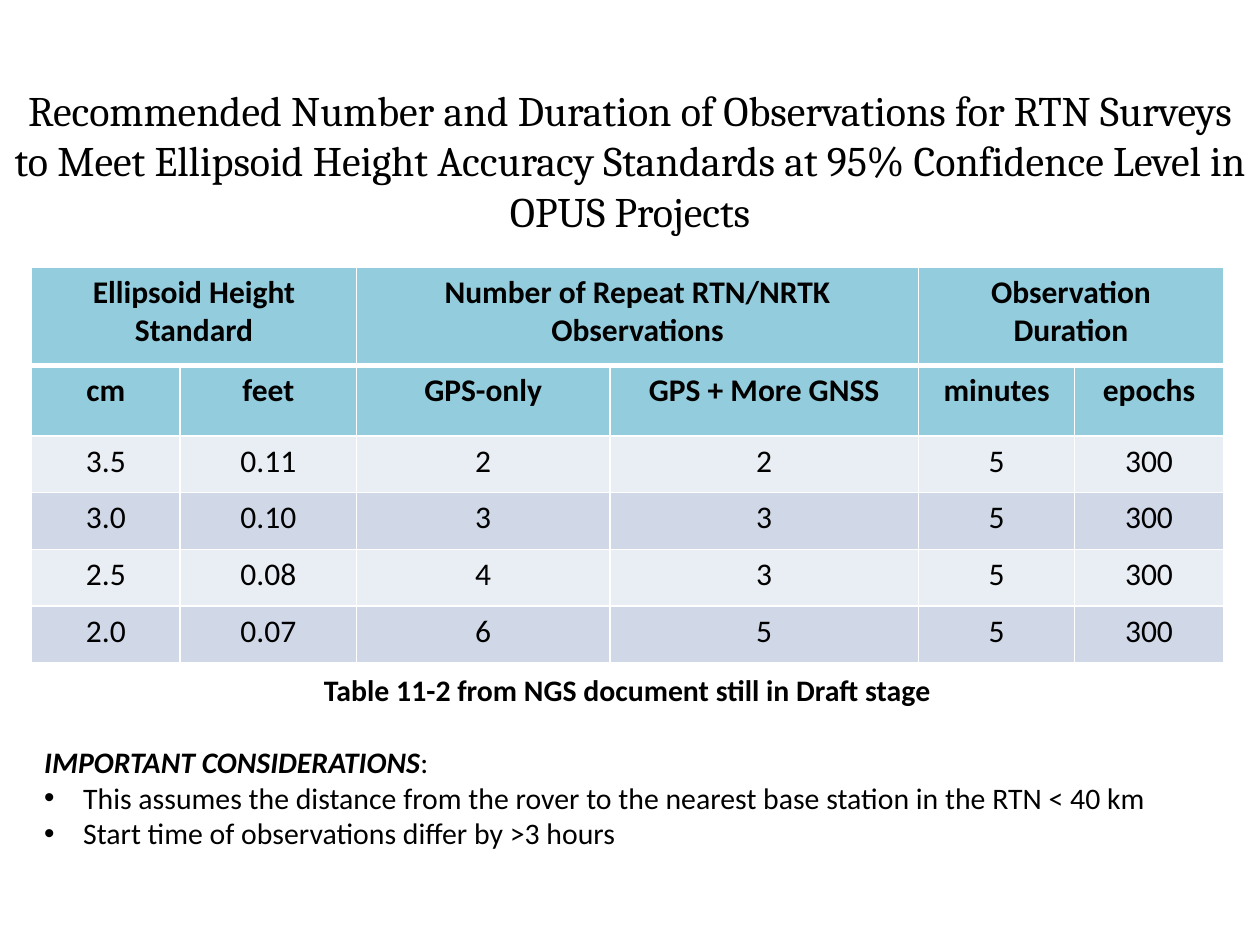
import lxml.etree
import pptx
import pptx.dml.color
import pptx.enum.text
import pptx.oxml.ns
import pptx.util
from dataclasses import dataclass
from pptx.util import Inches

ALIGN = pptx.enum.text.PP_ALIGN
ANCHOR = pptx.enum.text.MSO_ANCHOR


@dataclass(frozen=True)
class Theme:
    title_font: str = "Cambria"
    body_font: str = "Calibri"
    title_size: float = 24
    table_size: float = 18
    note_size: float = 17
    text: str = "000000"
    border: str = "FFFFFF"
    header: str = "93CDDD"
    bands: tuple = ("E9EDF4", "D0D8E8")


TITLE = ("Recommended Number and Duration of Observations for RTN Surveys to Meet "
         "Ellipsoid Height Accuracy Standards at 95% Confidence Level in OPUS Projects")
GROUPS = ["Ellipsoid Height Standard", "Number of Repeat RTN/NRTK Observations",
          "Observation Duration"]
ROWS = [
    ["cm", "feet", "GPS-only", "GPS + More GNSS", "minutes", "epochs"],
    ["3.5", "0.11", "2", "2", "5", "300"],
    ["3.0", "0.10", "3", "3", "5", "300"],
    ["2.5", "0.08", "4", "3", "5", "300"],
    ["2.0", "0.07", "6", "5", "5", "300"],
]
COLUMN_WIDTHS = [1.18, 1.4, 2.01, 2.45, 1.24, 1.18]
ROW_HEIGHTS = [0.78, 0.56] + [0.45] * 4
CAPTION = "Table 11-2 from NGS document still in Draft stage"
CONSIDERATIONS = [
    "This assumes the distance from the rover to the nearest base station in the RTN < 40 km",
    "Start time of observations differ by >3 hours",
]


class SlideBuilder:
    def __init__(self, slide, theme):
        self.slide = slide
        self.theme = theme

    def style_run(self, run, size, bold=False, italic=False, font=None):
        run.font.name = font or self.theme.body_font
        run.font.size = pptx.util.Pt(size)
        run.font.bold = bold
        run.font.italic = italic
        run.font.color.rgb = pptx.dml.color.RGBColor.from_string(self.theme.text)

    def place(self, shape, left, top, width, height):
        shape.left, shape.top = Inches(left), Inches(top)
        shape.width, shape.height = Inches(width), Inches(height)
        shape.text_frame.word_wrap = True
        shape.text_frame.auto_size = pptx.enum.text.MSO_AUTO_SIZE.NONE

    def title(self, text, *box):
        shape = self.slide.shapes.title
        self.place(shape, *box)
        shape.text_frame.vertical_anchor = ANCHOR.MIDDLE
        shape.text_frame.text = text
        paragraph = shape.text_frame.paragraphs[0]
        paragraph.alignment = ALIGN.CENTER
        self.style_run(paragraph.runs[0], self.theme.title_size, font=self.theme.title_font)

    def border(self, cell, side, width):
        line = lxml.etree.SubElement(cell._tc.get_or_add_tcPr(),
                                     pptx.oxml.ns.qn(f"a:ln{side}"),
                                     w=str(pptx.util.Pt(width)))
        fill = lxml.etree.SubElement(line, pptx.oxml.ns.qn("a:solidFill"))
        lxml.etree.SubElement(fill, pptx.oxml.ns.qn("a:srgbClr"), val=self.theme.border)

    def cell(self, cell, text, fill, bold, top=1, bottom=1):
        for side, width in zip("LRTB", (1, 1, top, bottom)):
            self.border(cell, side, width)
        cell.fill.solid()
        cell.fill.fore_color.rgb = pptx.dml.color.RGBColor.from_string(fill)
        if text:
            cell.text_frame.text = text
            paragraph = cell.text_frame.paragraphs[0]
            paragraph.alignment = ALIGN.CENTER
            self.style_run(paragraph.runs[0], self.theme.table_size, bold)

    def table(self, groups, rows, left, top):
        """Draw a table whose first row spans each group over two columns."""
        table = self.slide.shapes.add_table(
            len(ROW_HEIGHTS), len(COLUMN_WIDTHS), Inches(left), Inches(top),
            Inches(sum(COLUMN_WIDTHS)), Inches(sum(ROW_HEIGHTS))).table
        for column, width in zip(table.columns, COLUMN_WIDTHS):
            column.width = Inches(width)
        for row, height in zip(table.rows, ROW_HEIGHTS):
            row.height = Inches(height)
        for index, text in enumerate(groups):
            first, second = table.cell(0, 2 * index), table.cell(0, 2 * index + 1)
            first.merge(second)
            self.cell(first, text, self.theme.header, True, bottom=3)
            self.cell(second, "", self.theme.header, True, bottom=3)
        for row_index, values in enumerate(rows):
            is_header = row_index == 0
            fill = self.theme.header if is_header else self.theme.bands[(row_index - 1) % 2]
            for column_index, text in enumerate(values):
                self.cell(table.cell(row_index + 1, column_index), text, fill, is_header,
                          top=3 if is_header else 1)

    def indent(self, paragraph, hanging, bullet=None):
        properties = paragraph._p.get_or_add_pPr()
        properties.set("marL", str(Inches(hanging)))
        properties.set("indent", str(-Inches(hanging)))
        if bullet:
            lxml.etree.SubElement(properties, pptx.oxml.ns.qn("a:buChar"), char=bullet)
        else:
            lxml.etree.SubElement(properties, pptx.oxml.ns.qn("a:buNone"))
        paragraph.space_before = pptx.util.Pt(0)

    def notes(self, caption, heading, items, *box):
        shape = self.slide.placeholders[1]
        self.place(shape, *box)
        frame = shape.text_frame
        frame.vertical_anchor = ANCHOR.TOP
        frame.text = "\n".join([caption, heading, *items])
        caption_line, heading_line, *item_lines = frame.paragraphs
        size = self.theme.note_size

        self.indent(caption_line, 0)
        caption_line.alignment = ALIGN.CENTER
        self.style_run(caption_line.runs[0], size, bold=True)

        self.indent(heading_line, 0)
        heading_line.space_before = pptx.util.Pt(20.75)
        self.style_run(heading_line.runs[0], size, bold=True, italic=True)
        colon = heading_line.add_run()
        colon.text = ":"
        self.style_run(colon, size)

        for paragraph in item_lines:
            self.indent(paragraph, 0.31, "•")
            self.style_run(paragraph.runs[0], size)


def main():
    presentation = pptx.Presentation()
    presentation.slide_width, presentation.slide_height = Inches(10), Inches(7.5)
    slide = presentation.slides.add_slide(presentation.slide_layouts[1])
    builder = SlideBuilder(slide, Theme())
    builder.title(TITLE, 0, 0.54, 10, 1.46)
    builder.table(GROUPS, ROWS, 0.25, 2.12)
    builder.notes(CAPTION, "IMPORTANT CONSIDERATIONS", CONSIDERATIONS, 0.25, 5.28, 9.46, 1.53)
    presentation.save("out.pptx")


if __name__ == "__main__":
    main()
